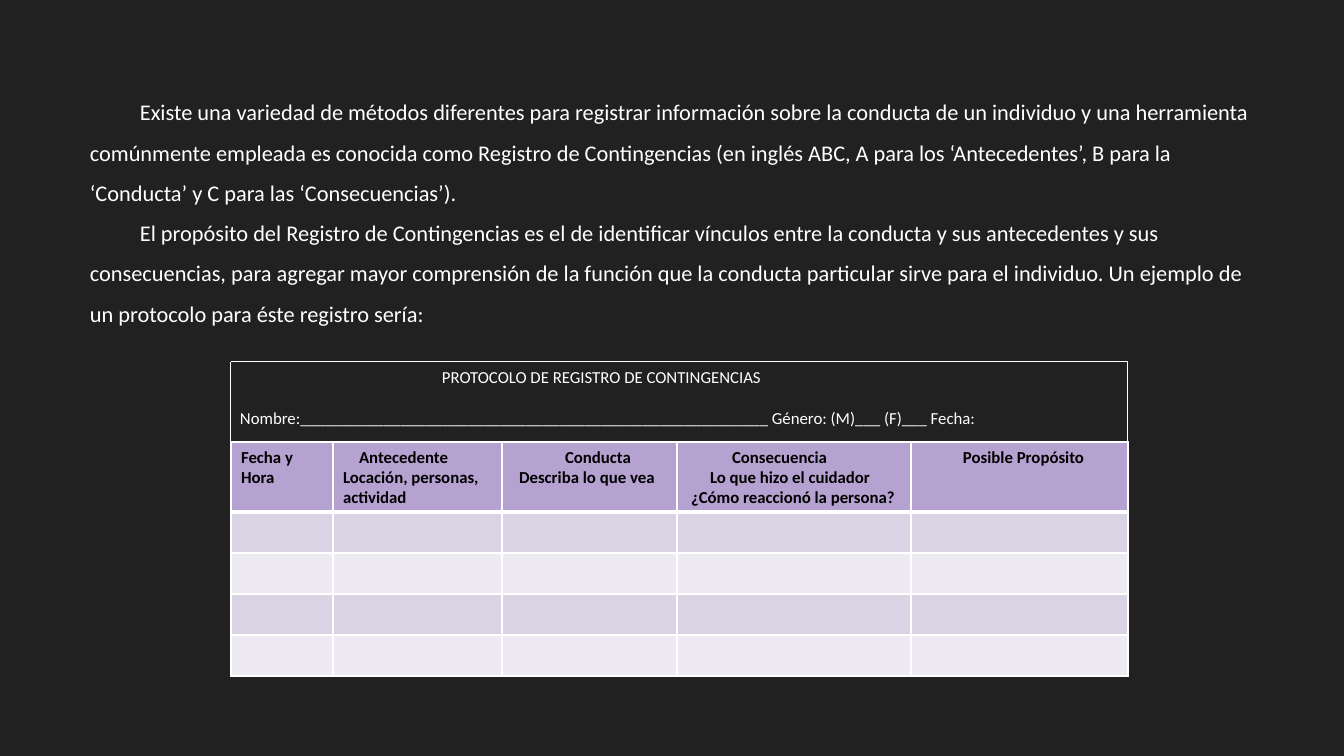
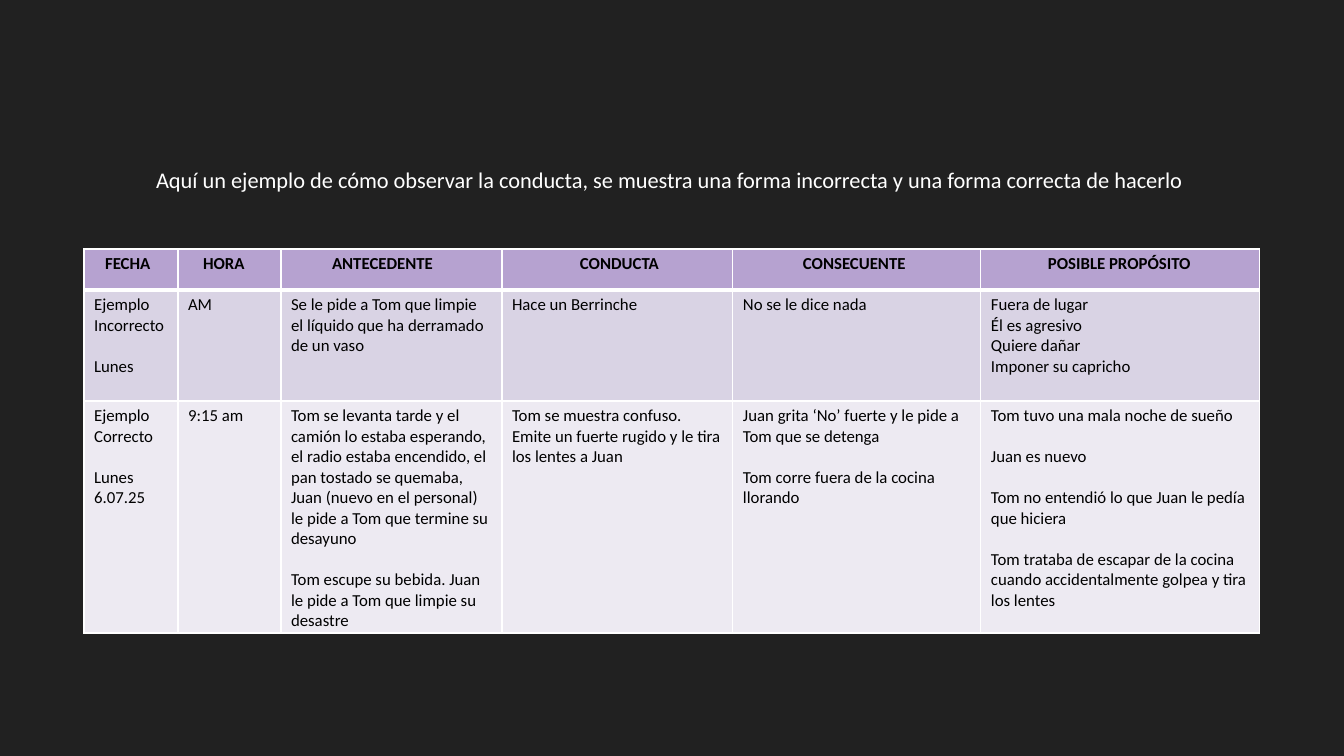
"""Build two slides about keeping a contingency record of behaviour."""
from dataclasses import dataclass

from lxml import etree
from pptx import Presentation
from pptx.dml.color import RGBColor
from pptx.enum.shapes import MSO_CONNECTOR
from pptx.enum.text import MSO_ANCHOR, MSO_AUTO_SIZE, PP_ALIGN
from pptx.oxml.ns import qn
from pptx.util import Emu, Pt

STRAIGHT = MSO_CONNECTOR.STRAIGHT
TOP = MSO_ANCHOR.TOP
LEFT = PP_ALIGN.LEFT
NO_AUTOFIT = MSO_AUTO_SIZE.NONE

SLIDE_WIDTH, SLIDE_HEIGHT = 1344, 756
EMU_PER_PX = 12192000 / SLIDE_WIDTH
TITLE_ONLY, BLANK = 5, 6


@dataclass(frozen=True)
class Theme:
    """Colours, type sizes and line widths shared by the slides."""
    font: str = "Calibri"
    background: str = "212121"
    light: str = "FFFFFF"
    dark: str = "000000"
    header: str = "B6A2D0"
    bands: tuple = ("D9D3E4", "EDEAF2")
    body_size: float = 16
    table_size: float = 12
    paragraph_gap: float = 14.65
    body_spacing: float = 1.5
    outline: float = 0.75
    border: float = 1
    header_border: float = 3


THEME = Theme()


@dataclass(frozen=True)
class Line:
    """One paragraph with its left indent, first-line indent and gap above."""
    text: str
    indent: int = 0
    first_line: int = 0
    gap: bool = False


INTRODUCTION = (
    Line("Existe una variedad de métodos diferentes para registrar información "
         "sobre la conducta de un individuo y una herramienta comúnmente empleada "
         "es conocida como Registro de Contingencias (en inglés ABC, A para los "
         "‘Antecedentes’, B para la ‘Conducta’ y C para las ‘Consecuencias’).",
         first_line=50),
    Line("El propósito del Registro de Contingencias es el de identificar vínculos "
         "entre la conducta y sus antecedentes y sus consecuencias, para agregar "
         "mayor comprensión de la función que la conducta particular sirve para el "
         "individuo. Un ejemplo de un protocolo para éste registro sería:",
         first_line=50),
)
FORM_HEADING = (
    Line("PROTOCOLO DE REGISTRO DE CONTINGENCIAS", indent=202),
    Line("Nombre:" + "_" * 56 + " Género: (M)___ (F)___ Fecha:", gap=True),
)
FORM_HEADER = (
    (Line("Fecha y Hora"),),
    (Line("Antecedente", 16), Line("Locación, personas,"), Line("actividad")),
    (Line("Conducta", 53), Line("Describa lo que vea", 7)),
    (Line("Consecuencia", 45), Line("Lo que hizo el cuidador", 23),
     Line("¿Cómo reaccionó la persona?", 4)),
    (Line("Posible Propósito", 42),),
)
EXAMPLE_TITLE = (
    Line("Aquí un ejemplo de cómo observar la conducta, se muestra una forma "
         "incorrecta y una forma correcta de hacerlo"),
)
EXAMPLE_HEADER = (
    (Line("FECHA", 11),),
    (Line("HORA", 15),),
    (Line("ANTECEDENTE", 41),),
    (Line("CONDUCTA", 68),),
    (Line("CONSECUENTE", 60),),
    (Line("POSIBLE PROPÓSITO", 57),),
)
INCORRECT_EXAMPLE = (
    (Line("Ejemplo Incorrecto"), Line("Lunes", gap=True)),
    (Line("AM"),),
    (Line("Se le pide a Tom que limpie el líquido que ha derramado de un vaso"),),
    (Line("Hace un Berrinche"),),
    (Line("No se le dice nada"),),
    (Line("Fuera de lugar"), Line("Él es agresivo"), Line("Quiere dañar"),
     Line("Imponer su capricho")),
)
CORRECT_EXAMPLE = (
    (Line("Ejemplo Correcto"), Line("Lunes", gap=True), Line("6.07.25")),
    (Line("9:15 am"),),
    (Line("Tom se levanta tarde y el camión lo estaba esperando, el radio estaba "
          "encendido, el pan tostado se quemaba, Juan (nuevo en el personal) le "
          "pide a Tom que termine su desayuno"),
     Line("Tom escupe su bebida. Juan le pide a Tom que limpie su desastre",
          gap=True)),
    (Line("Tom se muestra confuso. Emite un fuerte rugido y le tira los lentes "
          "a Juan"),),
    (Line("Juan grita ‘No’ fuerte y le pide a Tom que se detenga"),
     Line("Tom corre fuera de la cocina llorando", gap=True)),
    (Line("Tom tuvo una mala noche de sueño"),
     Line("Juan es nuevo", gap=True),
     Line("Tom no entendió lo que Juan le pedía que hiciera", gap=True),
     Line("Tom trataba de escapar de la cocina cuando accidentalmente golpea y "
          "tira los lentes", gap=True)),
)


def px(length):
    """Turn pixels into EMU."""
    return Emu(round(length * EMU_PER_PX))


def rgb(color):
    """Turn a hex string into a colour."""
    return RGBColor.from_string(color)


def write_lines(text_frame, lines, size, color, bold=False, spacing=None):
    """Write the lines as formatted paragraphs."""
    text_frame.text = "\n".join(line.text for line in lines)
    for paragraph, line in zip(text_frame.paragraphs, lines):
        paragraph.alignment = LEFT
        paragraph.line_spacing = spacing
        if line.gap:
            paragraph.space_before = Pt(THEME.paragraph_gap)
        properties = paragraph._p.get_or_add_pPr()
        properties.set("marL", str(px(line.indent)))
        properties.set("indent", str(px(line.first_line)))
        for run in paragraph.runs:
            run.font.name = THEME.font
            run.font.size = Pt(size)
            run.font.bold = bold
            run.font.color.rgb = rgb(color)


def add_text(slide, box, lines, size, spacing=None):
    """Add a wrapped text box in the light colour."""
    text_frame = slide.shapes.add_textbox(*map(px, box)).text_frame
    text_frame.word_wrap = True
    write_lines(text_frame, lines, size, THEME.light, spacing=spacing)


def set_title(slide, box, lines):
    """Place and format the title placeholder."""
    title = slide.shapes.title
    title.left, title.top, title.width, title.height = map(px, box)
    text_frame = title.text_frame
    text_frame.word_wrap = True
    text_frame.auto_size = NO_AUTOFIT
    text_frame.vertical_anchor = TOP
    write_lines(text_frame, lines, THEME.body_size, THEME.light)


def add_rule(slide, start, end):
    """Add a thin light line between two points."""
    rule = slide.shapes.add_connector(STRAIGHT, *map(px, start + end))
    rule.line.color.rgb = rgb(THEME.light)
    rule.line.width = Pt(THEME.outline)
    etree.SubElement(rule._element.spPr, qn("a:effectLst"))


def set_borders(cell, top, bottom):
    """Draw the four light borders of a cell."""
    properties = cell._tc.get_or_add_tcPr()
    widths = {"lnL": THEME.border, "lnR": THEME.border, "lnT": top, "lnB": bottom}
    for side, width in widths.items():
        border = etree.SubElement(properties, qn(f"a:{side}"), w=str(Pt(width)))
        fill = etree.SubElement(border, qn("a:solidFill"))
        etree.SubElement(fill, qn("a:srgbClr"), val=THEME.light)


def format_cell(cell, row, lines):
    """Give a cell its text, borders and the fill of its row."""
    is_header = row == 0
    cell.margin_bottom = 0
    write_lines(cell.text_frame, lines, THEME.table_size, THEME.dark, is_header)
    set_borders(cell,
                top=THEME.header_border if row == 1 else THEME.border,
                bottom=THEME.header_border if is_header else THEME.border)
    cell.fill.solid()
    color = THEME.header if is_header else THEME.bands[(row - 1) % 2]
    cell.fill.fore_color.rgb = rgb(color)


def add_record_table(slide, left, top, widths, heights, rows):
    """Add a table with a header row and banded rows below it."""
    table = slide.shapes.add_table(
        len(heights), len(widths), px(left), px(top),
        px(sum(widths)), px(sum(heights))).table
    table.horz_banding = False
    for column, width in zip(table.columns, widths):
        column.width = px(width)
    for index, (height, row_lines) in enumerate(zip(heights, rows)):
        table.rows[index].height = px(height)
        for cell, lines in zip(table.rows[index].cells, row_lines):
            format_cell(cell, index, lines)


def build_form_slide(presentation):
    """Build the slide with the introduction and the empty form."""
    slide = presentation.slides.add_slide(presentation.slide_layouts[BLANK])
    left, top, table_top, rule_end = 231, 362, 442, 472
    widths = (102, 169, 175, 234, 217)
    right = left + sum(widths)
    empty_rows = 4
    add_text(slide, (80, 80, 1186, 252), INTRODUCTION, THEME.body_size,
             THEME.body_spacing)
    add_text(slide, (left - 1, top, sum(widths), table_top - top),
             FORM_HEADING, THEME.table_size)
    empty_row = ((Line(""),),) * len(widths)
    add_record_table(slide, left, table_top, widths, (70,) + (41,) * empty_rows,
                     (FORM_HEADER,) + (empty_row,) * empty_rows)
    add_rule(slide, (left, top), (left, rule_end))
    add_rule(slide, (left, top), (right, top))
    add_rule(slide, (right, top), (right, rule_end))


def build_example_slide(presentation):
    """Build the slide with an incorrect and a correct record."""
    slide = presentation.slides.add_slide(presentation.slide_layouts[TITLE_ONLY])
    set_title(slide, (146, 161, 1198, 37), EXAMPLE_TITLE)
    add_record_table(slide, 84, 249, (94, 103, 221, 231, 248, 279),
                     (41, 111, 232),
                     (EXAMPLE_HEADER, INCORRECT_EXAMPLE, CORRECT_EXAMPLE))


def main():
    """Build and save the presentation."""
    presentation = Presentation()
    presentation.slide_width = px(SLIDE_WIDTH)
    presentation.slide_height = px(SLIDE_HEIGHT)
    background = presentation.slide_master.background.fill
    background.solid()
    background.fore_color.rgb = rgb(THEME.background)
    build_form_slide(presentation)
    build_example_slide(presentation)
    presentation.save("out.pptx")


if __name__ == "__main__":
    main()
